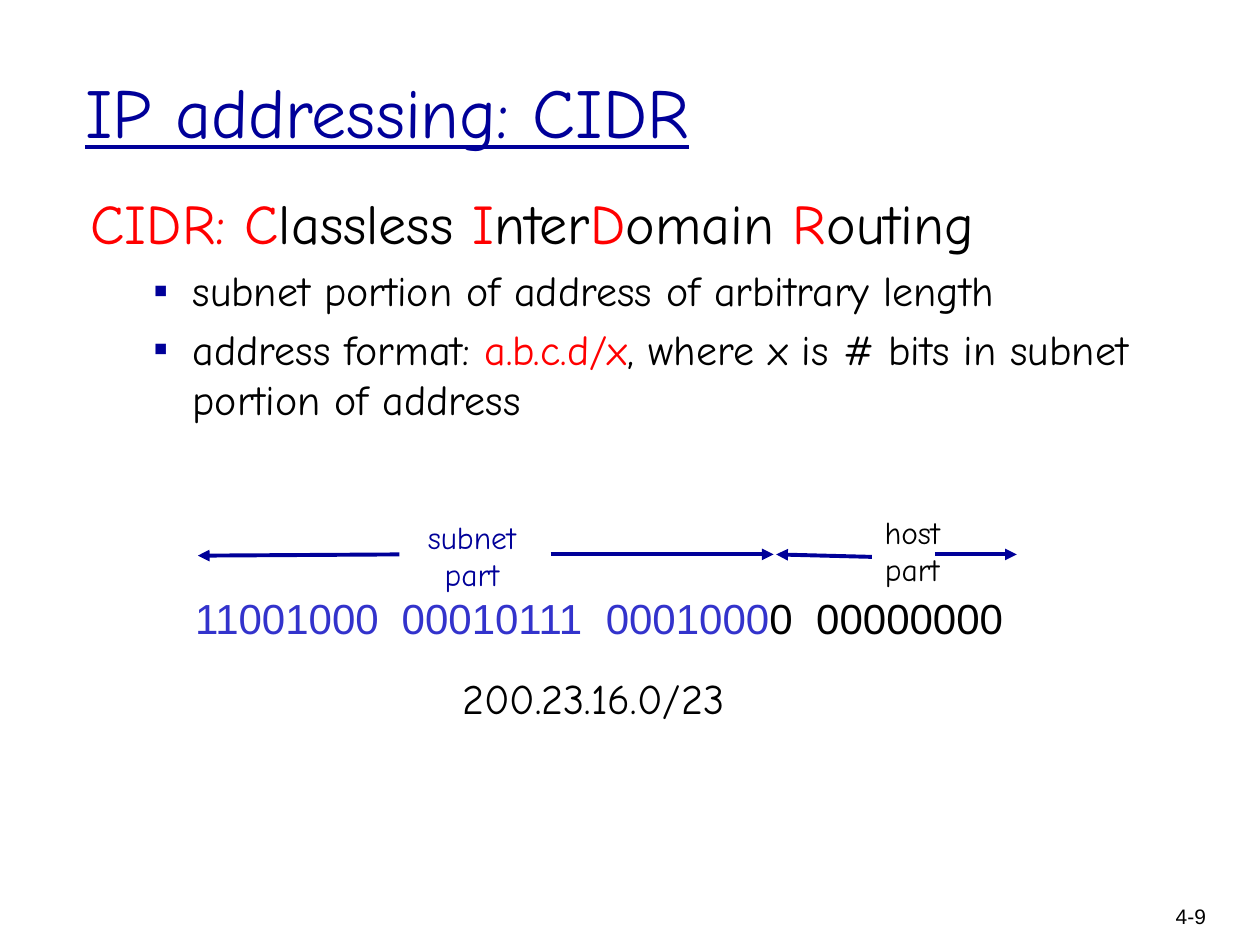
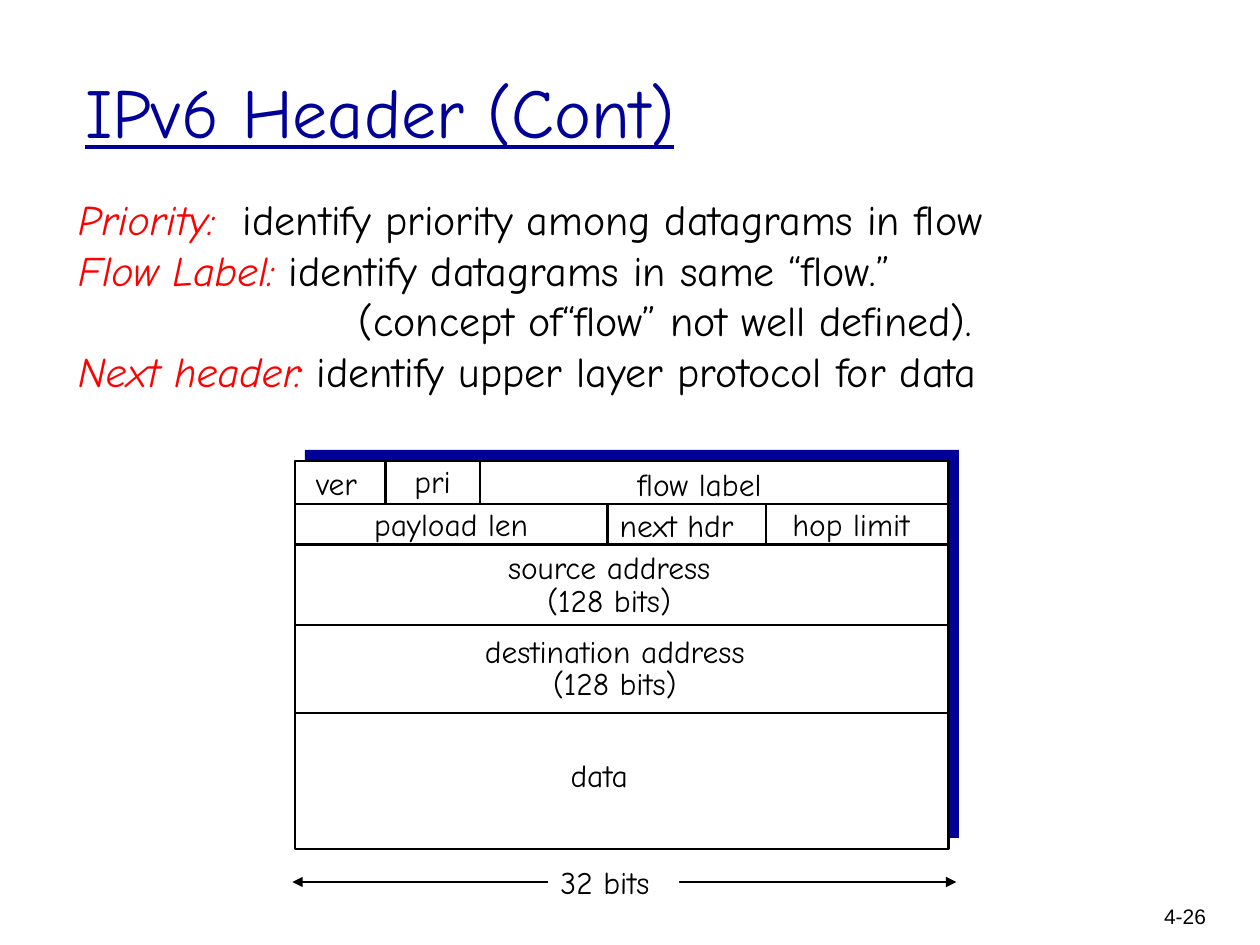
from lxml import etree
from pptx import Presentation
from pptx.dml.color import RGBColor
from pptx.enum.shapes import MSO_CONNECTOR, MSO_SHAPE
from pptx.enum.text import MSO_ANCHOR, PP_ALIGN
from pptx.oxml.ns import qn
from pptx.util import Inches, Pt

LINE = MSO_CONNECTOR.STRAIGHT
RECT = MSO_SHAPE.RECTANGLE
MIDDLE = MSO_ANCHOR.MIDDLE
LEFT, CENTER, RIGHT = PP_ALIGN.LEFT, PP_ALIGN.CENTER, PP_ALIGN.RIGHT

WIDE, HIGH = Inches(10), Inches(7.5)
COLS = 100
NAVY, RED, BLACK, WHITE, BLUE = "000099", "FF0000", "000000", "FFFFFF", "3333CC"
HAND, SANS = "Comic Neue", "Arial"


def grid(*nums):
    """Turn counts of square grid cells (100 across, 75 down) into lengths."""
    return [round(num * WIDE / COLS) for num in nums]


def color(code):
    return RGBColor.from_string(code)


def node(parent, tag, **attrs):
    return etree.SubElement(parent, qn(tag), {k: str(v) for k, v in attrs.items()})


def add_box(slide, box):
    frame = slide.shapes.add_textbox(*grid(*box)).text_frame
    frame.word_wrap = True
    return frame


def add_para(frame, runs, size, align=LEFT, font=HAND, before=None, spacing=None):
    """Add a paragraph of (words, colour) runs to a frame."""
    first = frame.paragraphs[0]
    para = frame.add_paragraph() if first.runs else first
    para.alignment = align
    para.space_before = before
    para.line_spacing = spacing
    for words, code in runs:
        run = para.add_run()
        run.text = words
        run.font.name = font
        run.font.size = Pt(size)
        run.font.color.rgb = color(code)
    return para


def add_tabs(para, stops):
    tabs = node(para._p.get_or_add_pPr(), "a:tabLst")
    for stop in grid(*stops):
        node(tabs, "a:tab", pos=stop, algn="l")


def set_indent(para, left, hang=0):
    props = para._p.get_or_add_pPr()
    margin, first = grid(left, -hang)
    props.set("marL", str(margin))
    props.set("indent", str(first))
    return props


def add_bullet(para):
    props = set_indent(para, 8.1, 3.1)
    node(node(props, "a:buClr"), "a:srgbClr", val=NAVY)
    node(props, "a:buFont", typeface=SANS)
    node(props, "a:buChar", char="▪")


def add_label(slide, box, lines, code=BLACK, size=18, align=LEFT, spacing=None):
    frame = add_box(slide, box)
    for line in lines.split("\n"):
        add_para(frame, [(line, code)], size, align, spacing=spacing)


def add_rect(slide, box, fill, edge=None):
    rect = slide.shapes.add_shape(RECT, *grid(*box))
    rect.shadow.inherit = False
    rect.fill.solid()
    rect.fill.fore_color.rgb = color(fill)
    if edge:
        rect.line.color.rgb = color(edge)
        rect.line.width = Pt(1.5)
    else:
        rect.line.fill.background()


def add_line(slide, ends, code=BLACK, width=1.5, tips=()):
    """Draw a line; tips names the ends (headEnd, tailEnd) with an arrow."""
    line = slide.shapes.add_connector(LINE, *grid(*ends))
    line.line.color.rgb = color(code)
    line.line.width = Pt(width)
    for tip in tips:
        node(line.line._get_or_add_ln(), "a:" + tip, type="triangle")
    node(line._element.spPr, "a:effectLst")


def add_page(deck, title, number):
    slide = deck.slides.add_slide(deck.slide_layouts[6])
    frame = add_box(slide, (5.8, 2.5, 85, 12.5))
    frame.vertical_anchor = MIDDLE
    add_para(frame, [(title, NAVY)], 40).runs[0].font.underline = True
    foot = add_box(slide, (89.3, 71.2, 7.4, 3.8))
    add_para(foot, [(number, BLACK)], 12, RIGHT, SANS)
    return slide


def draw_cidr(deck):
    slide = add_page(deck, "IP addressing: CIDR", "4-9")
    body = add_box(slide, (6.2, 14.5, 88.7, 34.7))
    name = [("CIDR: C", RED), ("lassless ", BLACK), ("I", RED), ("nter", BLACK),
            ("D", RED), ("omain ", BLACK), ("R", RED), ("outing", BLACK)]
    add_para(body, name, 32, before=Pt(6.4))
    points = [
        [("subnet portion of address of arbitrary length", BLACK)],
        [("address format: ", BLACK), ("a.b.c.d/x", RED),
         (", where x is # bits in subnet portion of address", BLACK)],
    ]
    for runs in points:
        add_bullet(add_para(body, runs, 24, before=Pt(4.8)))

    bits = add_box(slide, (14.5, 46.5, 67, 5))
    octets = [("11001000\t00010111\t0001000", BLUE), ("0\t00000000", BLACK)]
    add_tabs(add_para(bits, octets, 24, font=SANS), (16.4, 32.6, 49.3))
    add_label(slide, (32.5, 40.6, 9.9, 7), "subnet\npart", NAVY, align=CENTER)
    add_label(slide, (68.8, 40.2, 7.2, 7), "host\npart", align=CENTER)
    for ends in [(43.7, 44, 61.4, 44), (31.7, 44, 15.7, 44.1),
                 (69.2, 44.2, 61.6, 44), (74.2, 44, 80.7, 44)]:
        add_line(slide, ends, NAVY, 2.25, ["tailEnd"])
    add_label(slide, (35.7, 52.9, 26, 5), "200.23.16.0/23", size=24)


def draw_terms(slide):
    frame = add_box(slide, (5.2, 14.9, 83.5, 17))
    terms = [
        ("Priority:", "\tidentify priority among datagrams in flow"),
        ("Flow Label:", " identify datagrams in same “flow.”"),
        ("", "(concept of“flow” not well defined)."),
        ("Next header:", " identify upper layer protocol for data"),
    ]
    for term, rest in terms:
        runs = [(term, RED), (rest, BLACK)] if term else [(rest, BLACK)]
        para = add_para(frame, runs, 24)
        if term:
            para.runs[0].font.italic = True
        else:
            set_indent(para, 22.3)
        if "\t" in rest:
            add_tabs(para, [13.1])


def draw_header(slide):
    left, top, wide, high = 23.4, 36.6, 51.9, 30.8
    add_rect(slide, (left + 0.8, top - 0.9, wide, high), NAVY)
    add_rect(slide, (left, top, wide, high), WHITE, BLACK)
    rows = [40, 43.2, 49.6, 56.6]
    for row in rows:
        add_line(slide, (left, row, left + wide, row))
    for col, start, end in [(30.6, top, rows[0]), (38.1, top, rows[0]),
                            (48.2, rows[0], rows[1]), (60.8, rows[0], rows[1])]:
        add_line(slide, (col, start, col, end))
    fields = [("ver", 24.1, 36.3, 5.8), ("pri", 31.9, 36.2, 5.2),
              ("flow label", 49.6, 36.4, 13.2), ("payload len", 28.7, 39.6, 14.8),
              ("next hdr", 48.2, 39.7, 12.2), ("hop limit", 61.9, 39.6, 12),
              ("data", 44.3, 59.5, 7.2)]
    for name, col, row, span in fields:
        add_label(slide, (col, row, span, 4), name)
    for name, col, row, span in [("source", 38.5, 43.5, 19.7),
                                 ("destination", 36.3, 50.1, 25)]:
        add_label(slide, (col, row, span, 6.1), name + " address\n(128 bits)",
                  align=CENTER, spacing=0.85)


def draw_ipv6(deck):
    slide = add_page(deck, "IPv6 Header (Cont)", "4-26")
    draw_terms(slide)
    draw_header(slide)
    add_line(slide, (23.2, 70, 75.9, 70), width=0.75, tips=["headEnd", "tailEnd"])
    span = (43.5, 68, 10.4, 4)
    add_rect(slide, span, WHITE)
    add_label(slide, span, "32 bits")


def main():
    deck = Presentation()
    deck.slide_width, deck.slide_height = WIDE, HIGH
    draw_cidr(deck)
    draw_ipv6(deck)
    deck.save("out.pptx")


if __name__ == "__main__":
    main()
